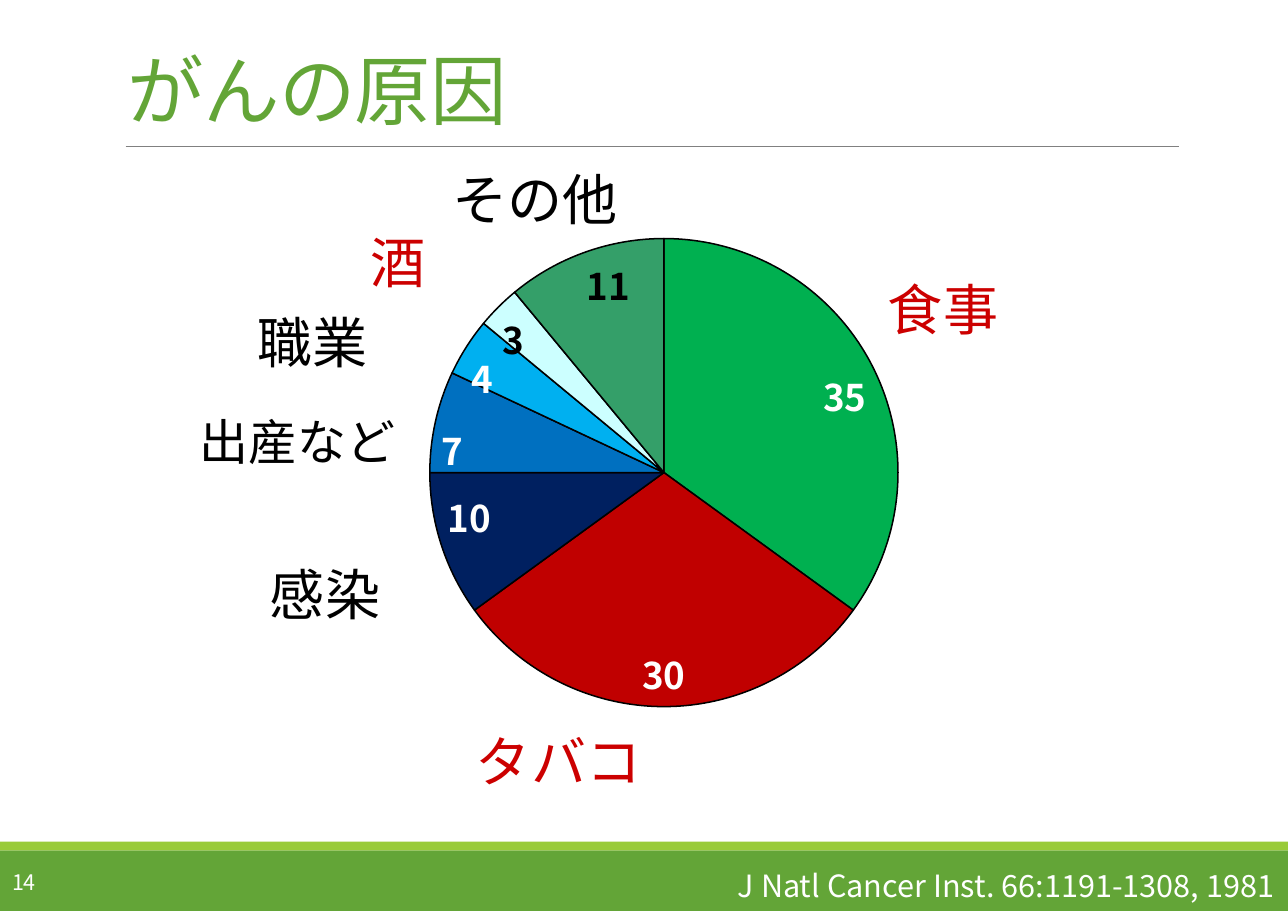
from lxml import etree
from pptx import Presentation
from pptx.chart.data import CategoryChartData
from pptx.dml.color import RGBColor
from pptx.enum.chart import XL_CHART_TYPE, XL_LABEL_POSITION
from pptx.enum.shapes import MSO_CONNECTOR, MSO_SHAPE
from pptx.enum.text import MSO_ANCHOR, MSO_AUTO_SIZE, PP_ALIGN
from pptx.oxml.ns import qn
from pptx.util import Inches, Pt

PIE = XL_CHART_TYPE.PIE
INSIDE_END = XL_LABEL_POSITION.INSIDE_END
STRAIGHT = MSO_CONNECTOR.STRAIGHT
RECTANGLE = MSO_SHAPE.RECTANGLE
TOP, MIDDLE, BOTTOM = MSO_ANCHOR.TOP, MSO_ANCHOR.MIDDLE, MSO_ANCHOR.BOTTOM
NO_AUTOFIT = MSO_AUTO_SIZE.NONE
LEFT, CENTER, RIGHT = PP_ALIGN.LEFT, PP_ALIGN.CENTER, PP_ALIGN.RIGHT

FONT = "Noto Sans CJK JP"
BLACK, WHITE, RED, GREEN = "000000", "FFFFFF", "CC0000", "63A537"


def rgb(value):
    return RGBColor.from_string(value)


def write(box, text, size, color, align=LEFT, anchor=TOP, wrap=False):
    frame = box.text_frame
    frame.auto_size = NO_AUTOFIT
    frame.word_wrap = wrap
    frame.vertical_anchor = anchor
    frame.margin_left = frame.margin_right = Inches(0.11)
    frame.margin_top = frame.margin_bottom = Inches(0.06)
    paragraph = frame.paragraphs[0]
    paragraph.text = text
    paragraph.alignment = align
    paragraph.font.name = FONT
    paragraph.font.size = Pt(size)
    paragraph.font.color.rgb = rgb(color)
    properties = paragraph._p.pPr.find(qn("a:defRPr"))
    etree.SubElement(properties, qn("a:ea"), typeface=FONT)
    return paragraph


deck = Presentation()
deck.slide_width, deck.slide_height = Inches(11.69), Inches(8.27)
slide = deck.slides.add_slide(deck.slide_layouts[5])
shapes = slide.shapes

for top, height, color in [(7.72, 0.55, GREEN), (7.64, 0.08, "99CB38")]:
    band = shapes.add_shape(RECTANGLE, 0, Inches(top), Inches(11.69), Inches(height))
    band.shadow.inherit = False
    band.fill.solid()
    band.fill.fore_color.rgb = rgb(color)
    band.line.fill.background()

rule = shapes.add_connector(STRAIGHT, Inches(1.14), Inches(1.33), Inches(10.7), Inches(1.33))
rule.line.color.rgb = rgb("808080")
rule.line.width = Pt(0.5)
etree.SubElement(rule._element.spPr, qn("a:effectLst"))

page_number = shapes.add_textbox(0, Inches(7.79), Inches(1.26), Inches(0.44))
write(page_number, "14", 14, WHITE, anchor=MIDDLE)

title = shapes.title
title.left, title.top = Inches(1.05), Inches(0.35)
title.width, title.height = Inches(9.65), Inches(0.94)
heading = write(title, "がんの原因", 50, GREEN, anchor=BOTTOM, wrap=True)
heading.line_spacing = 0.85
heading.runs[0].font._element.set("spc", "-60")

causes = CategoryChartData()
causes.categories = ["1", "2", "3", "4", "5", "6", "7"]
causes.add_series("Series 1", [35, 30, 10, 7, 4, 3, 11])
chart = shapes.add_chart(
    PIE, Inches(2.07), Inches(1.52), Inches(8.6), Inches(5.38), causes
).chart
chart.has_legend = False
chart.has_title = False
chart.font.name = FONT
chart.font.size = Pt(24)
chart.font.bold = True

plot = chart.plots[0]
plot.vary_by_categories = True
slice_styles = [
    ("00B050", WHITE),
    ("C00000", WHITE),
    ("002060", WHITE),
    ("0070C0", WHITE),
    ("00B0F0", WHITE),
    ("CCFFFF", BLACK),
    ("349F69", BLACK),
]
for index, (fill, label_color) in enumerate(slice_styles):
    cause = plot.series[0].points[index]
    cause.format.fill.solid()
    cause.format.fill.fore_color.rgb = rgb(fill)
    cause.format.line.color.rgb = rgb(BLACK)
    cause.format.line.width = Pt(1)
    share = cause.data_label
    share.font.name = FONT
    share.font.size = Pt(24)
    share.font.bold = True
    share.font.color.rgb = rgb(label_color)
    share.position = INSIDE_END

plot_area = chart._chartSpace.chart.plotArea
for old_layout in plot_area.findall(qn("c:layout")):
    plot_area.remove(old_layout)
layout = etree.Element(qn("c:layout"))
plot_area.insert(0, layout)
manual = etree.SubElement(layout, qn("c:manualLayout"))
for tag, value in [
    ("layoutTarget", "inner"),
    ("xMode", "edge"),
    ("yMode", "edge"),
    ("x", "0.21"),
    ("y", "0.12"),
    ("w", "0.5"),
    ("h", "0.79"),
]:
    etree.SubElement(manual, qn(f"c:{tag}"), val=value)

for text, left, top, width, height, size, color, align in [
    ("食事", 7.95, 2.44, 1.27, 0.7, 36, RED, LEFT),
    ("タバコ", 4.21, 6.54, 1.81, 0.7, 36, RED, LEFT),
    ("感染", 2.34, 5.03, 1.29, 0.7, 36, BLACK, LEFT),
    ("その他", 4, 1.44, 1.81, 0.7, 36, BLACK, LEFT),
    ("酒", 3.25, 2.01, 0.76, 0.7, 36, RED, LEFT),
    ("出産など", 1.67, 3.68, 2.07, 0.63, 32, BLACK, CENTER),
    ("職業", 2.23, 2.74, 1.29, 0.7, 36, BLACK, LEFT),
]:
    cause_name = shapes.add_textbox(Inches(left), Inches(top), Inches(width), Inches(height))
    write(cause_name, text, size, color, align)

citation = shapes.add_textbox(Inches(5.81), Inches(7.81), Inches(5.87), Inches(0.45))
write(citation, "J Natl Cancer Inst. 66:1191-1308, 1981", 20, WHITE, RIGHT, wrap=True)

deck.save("out.pptx")
